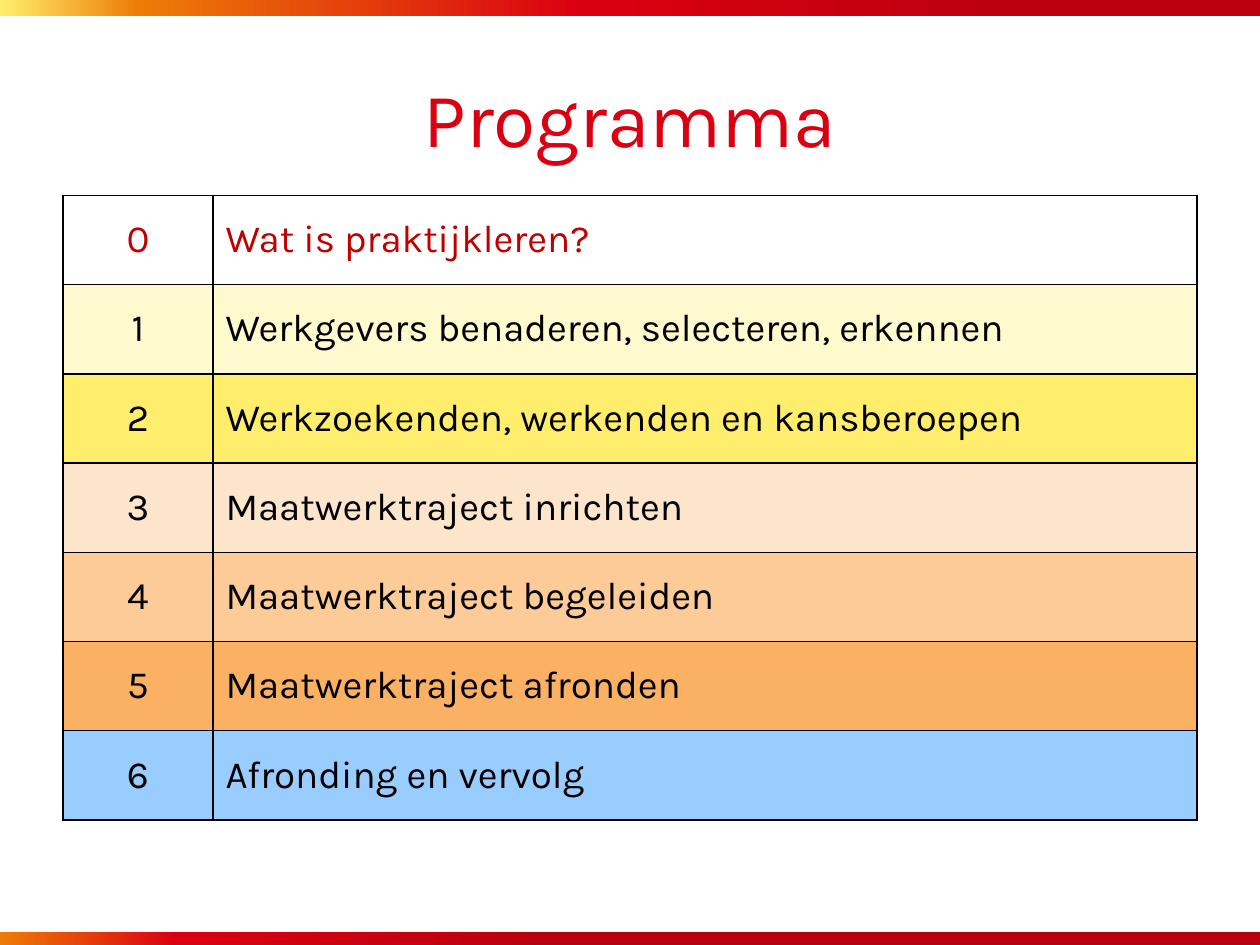
from lxml import etree
from pptx import Presentation
from pptx.dml.color import RGBColor
from pptx.enum.shapes import MSO_SHAPE
from pptx.enum.text import MSO_ANCHOR, PP_ALIGN
from pptx.oxml.ns import qn
from pptx.util import Pt

RECTANGLE = MSO_SHAPE.RECTANGLE
MIDDLE = MSO_ANCHOR.MIDDLE
CENTER, LEFT = PP_ALIGN.CENTER, PP_ALIGN.LEFT

FONT = "Karla"
COLORS = {
    "red": "DA0011",
    "dark_red": "BA000E",
    "orange": "ED7C07",
    "yellow": "FFEE6B",
    "highlight": "C00000",
    "black": "000000",
    "pale_yellow": "FFF9CE",
    "pale_orange": "FDE5CB",
    "light_orange": "FCCB98",
    "mid_orange": "FAB164",
    "blue": "99CCFF",
}


def add_run(paragraph, text, size, color):
    run = paragraph.add_run()
    run.text = text
    run.font.name = FONT
    run.font.size = Pt(size)
    run.font.color.rgb = RGBColor.from_string(COLORS[color])


def add_borders(cell):
    properties = cell._tc.get_or_add_tcPr()
    for side in ("lnL", "lnR", "lnT", "lnB"):
        line = etree.SubElement(properties, qn(f"a:{side}"), w=str(Pt(1)))
        fill = etree.SubElement(line, qn("a:solidFill"))
        etree.SubElement(fill, qn("a:srgbClr"), val=COLORS["black"])


presentation = Presentation()
presentation.slide_width, presentation.slide_height = Pt(720), Pt(540)
slide = presentation.slides.add_slide(presentation.slide_layouts[5])

# Gradient bars along the top and bottom edges
bars = [
    (0, [(0, "yellow"), (11, "orange"), (46, "red"), (82, "dark_red")]),
    (532.8, [(0, "orange"), (14, "red"), (44, "dark_red")]),
]
for top, stops in bars:
    bar = slide.shapes.add_shape(RECTANGLE, Pt(0), Pt(top), Pt(721.4), Pt(9.36))
    bar.shadow.inherit = False
    bar.line.fill.background()
    bar.fill.gradient()
    bar.fill.gradient_angle = 0
    stop_list = bar._element.spPr.find(qn("a:gradFill")).find(qn("a:gsLst"))
    stop_list.clear()
    for percent, color in stops:
        stop = etree.SubElement(stop_list, qn("a:gs"), pos=str(percent * 1000))
        etree.SubElement(stop, qn("a:srgbClr"), val=COLORS[color])

# Title
title = slide.shapes.title
title.left, title.top, title.width, title.height = Pt(36), Pt(21.6), Pt(648), Pt(90)
title.text_frame.vertical_anchor = MIDDLE
heading = title.text_frame.paragraphs[0]
heading.alignment = CENTER
add_run(heading, "Programma", 44, "red")

# Programme table: topic, row fill, text colour
programme = [
    ("Wat is praktijkleren?", None, "highlight"),
    ("Werkgevers benaderen, selecteren, erkennen", "pale_yellow", "black"),
    ("Werkzoekenden, werkenden en kansberoepen", "yellow", "black"),
    ("Maatwerktraject inrichten", "pale_orange", "black"),
    ("Maatwerktraject begeleiden", "light_orange", "black"),
    ("Maatwerktraject afronden", "mid_orange", "black"),
    ("Afronding en vervolg", "blue", "black"),
]
table = slide.shapes.add_table(
    len(programme), 2, Pt(36), Pt(111.6), Pt(648), Pt(357.14)
).table
table.first_row = table.horz_banding = False
table.columns[0].width, table.columns[1].width = Pt(85.7), Pt(562.3)

for number, (topic, row_fill, text_color) in enumerate(programme):
    table.rows[number].height = Pt(51.02)
    for column, (text, alignment) in enumerate([(str(number), CENTER), (topic, LEFT)]):
        cell = table.cell(number, column)
        cell.vertical_anchor = MIDDLE
        add_borders(cell)
        if row_fill:
            cell.fill.solid()
            cell.fill.fore_color.rgb = RGBColor.from_string(COLORS[row_fill])
        else:
            cell.fill.background()
        entry = cell.text_frame.paragraphs[0]
        entry.alignment = alignment
        add_run(entry, text, 22, text_color)

presentation.save("out.pptx")
